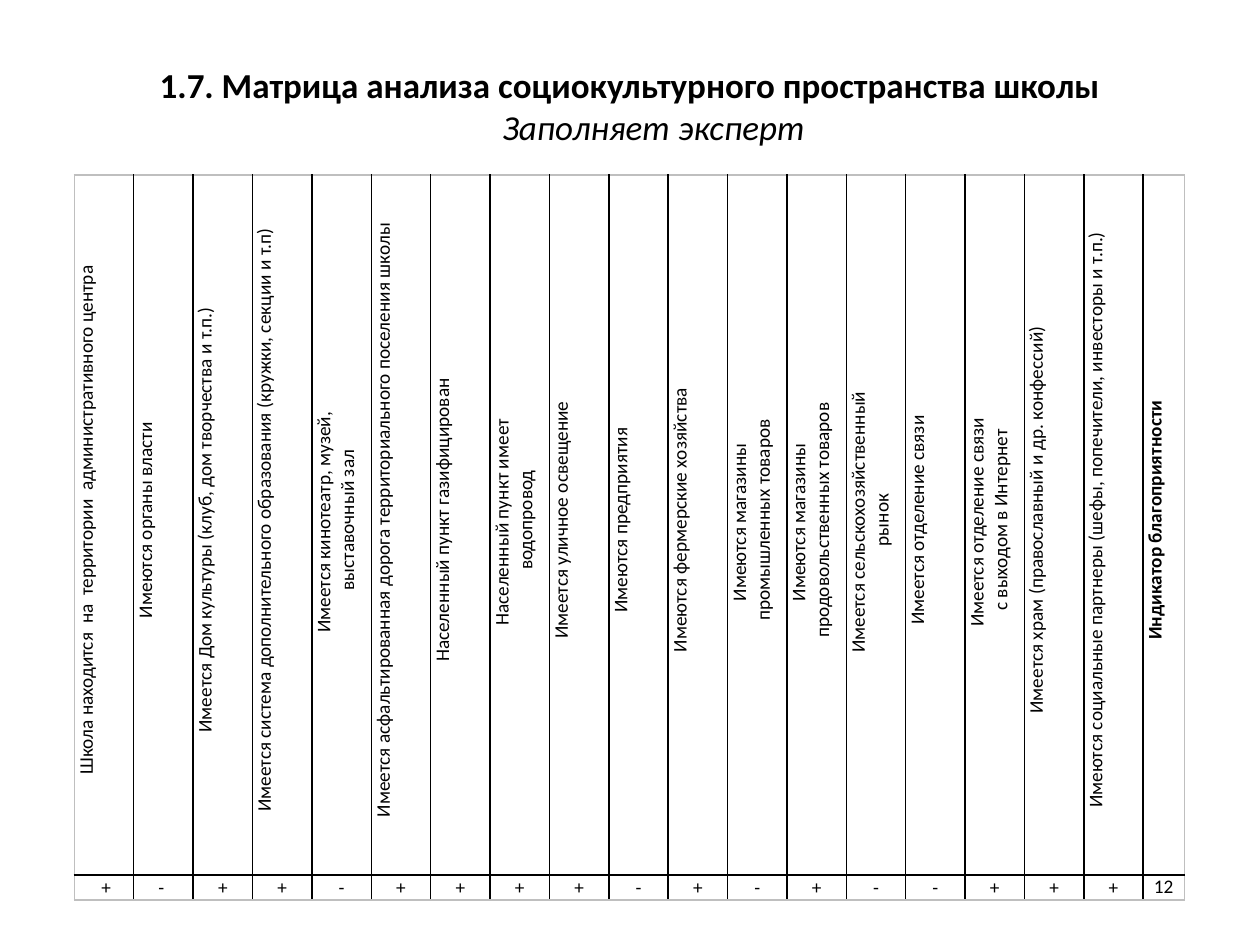
"""Build a slide with the matrix of a school's sociocultural surroundings."""
from pptx import Presentation, util as u
from pptx.dml.color import RGBColor
from pptx.enum import text
from pptx.oxml import ns
from lxml import etree

FONT = "Calibri"
COLOURS = {"ink": "000000", "frame": "BFBFBF"}
COLUMN_WIDTH, LAST_WIDTH = 33.95, 23.5
ROW_HEIGHTS = (400, 14.4)
TITLE = "1.7. Матрица анализа социокультурного пространства школы"
SUBTITLE = "Заполняет эксперт"
INDICATOR = ("Индикатор благоприятности", "12")
FACTORS = [
    ("Школа находится  на  территории  административного центра", " +"),
    ("Имеются органы власти", "- "),
    ("Имеется Дом культуры (клуб, дом творчества и т.п.)", "+"),
    ("Имеется система дополнительного образования (кружки, секции и т.п)", "+"),
    ("Имеется кинотеатр, музей, \vвыставочный зал", "-"),
    ("Имеется асфальтированная дорога территориального поселения школы", "+"),
    ("Населенный пункт газифицирован", "+"),
    ("Населенный пункт имеет \vводопровод", "+"),
    ("Имеется уличное освещение", "+"),
    ("Имеются предприятия", "-"),
    ("Имеются фермерские хозяйства", "+"),
    ("Имеются магазины \vпромышленных товаров", "-"),
    ("Имеются магазины \vпродовольственных товаров", "+"),
    ("Имеется сельскохозяйственный \vрынок", "-"),
    ("Имеется отделение связи", "-"),
    ("Имеется отделение связи \vс выходом в Интернет", "+"),
    ("Имеется храм (православный и др. конфессий)", "+"),
    ("Имеются социальные партнеры (шефы, попечители, инвесторы и т.п.)", "+"),
]


def style_font(font, size, bold=False, italic=False):
    """Set typeface, size, colour and emphasis."""
    font.name, font.size = FONT, u.Pt(size)
    font.bold, font.italic = bold, italic
    font.color.rgb = RGBColor.from_string(COLOURS["ink"])


def set_indent(para, margin, first=0):
    """Set the left margin and first-line indent of a paragraph."""
    properties = para._p.get_or_add_pPr()
    properties.set("marL", str(u.Pt(margin)))
    properties.set("indent", str(u.Pt(first)))


def add_title(page):
    """Add the two-line heading."""
    box = page.shapes.add_textbox(u.Pt(42.5), u.Pt(26), u.Pt(635), u.Pt(68.4))
    frame = box.text_frame
    frame.word_wrap = True
    frame.vertical_anchor = text.MSO_ANCHOR.MIDDLE
    para = frame.paragraphs[0]
    para.alignment = text.PP_ALIGN.CENTER
    set_indent(para, 27, -27)
    span = para.add_run()
    span.text = TITLE
    style_font(span.font, 20, bold=True)
    para.add_line_break()
    span = para.add_run()
    span.text = SUBTITLE
    style_font(span.font, 20, italic=True)


def set_border(cell, side, colour):
    """Draw one side of a cell."""
    line = etree.SubElement(cell._tc.get_or_add_tcPr(), ns.qn(f"a:ln{side}"), w=str(u.Pt(1)))
    fill = etree.SubElement(line, ns.qn("a:solidFill"))
    etree.SubElement(fill, ns.qn("a:srgbClr"), val=COLOURS[colour])


def fill_cell(cell, words, outer_sides, bold=False, upright=True):
    """Write and format one cell, with its text turned if not upright."""
    for side in "LRTB":
        set_border(cell, side, "frame" if side in outer_sides else "ink")
    cell.fill.background()
    cell.margin_left = cell.margin_right = u.Pt(3.6)
    cell.margin_top = cell.margin_bottom = 0
    cell.vertical_anchor = text.MSO_ANCHOR.MIDDLE
    para = cell.text_frame.paragraphs[0]
    para.text = words
    para.alignment = text.PP_ALIGN.CENTER
    style_font(para.font, 11, bold)
    for span in para.runs:
        style_font(span.font, 11, bold)
    if not upright:
        cell._tc.get_or_add_tcPr().set("vert", "vert270")
        set_indent(para, 5.67)


def add_matrix(page):
    """Add the table of factors above their marks."""
    entries = FACTORS + [INDICATOR]
    last = len(entries) - 1
    width = COLUMN_WIDTH * last + LAST_WIDTH
    table = page.shapes.add_table(2, len(entries), u.Pt(42.5), u.Pt(100),
                                  u.Pt(width), u.Pt(sum(ROW_HEIGHTS))).table
    table.first_row = table.horz_banding = False
    for row, height in zip(table.rows, ROW_HEIGHTS):
        row.height = u.Pt(height)
    for index, (factor, mark) in enumerate(entries):
        table.columns[index].width = u.Pt(LAST_WIDTH if index == last else COLUMN_WIDTH)
        edge = {0: "L", last: "R"}.get(index, "")
        fill_cell(table.cell(0, index), factor, edge + "T", bold=index == last, upright=False)
        fill_cell(table.cell(1, index), mark, edge + "B")
    table.cell(1, last).vertical_anchor = text.MSO_ANCHOR.TOP


def main():
    """Create the deck and save it."""
    deck = Presentation()
    deck.slide_width, deck.slide_height = u.Pt(720), u.Pt(540)
    page = deck.slides.add_slide(deck.slide_layouts[6])
    add_title(page)
    add_matrix(page)
    deck.save("out.pptx")


if __name__ == "__main__":
    main()
